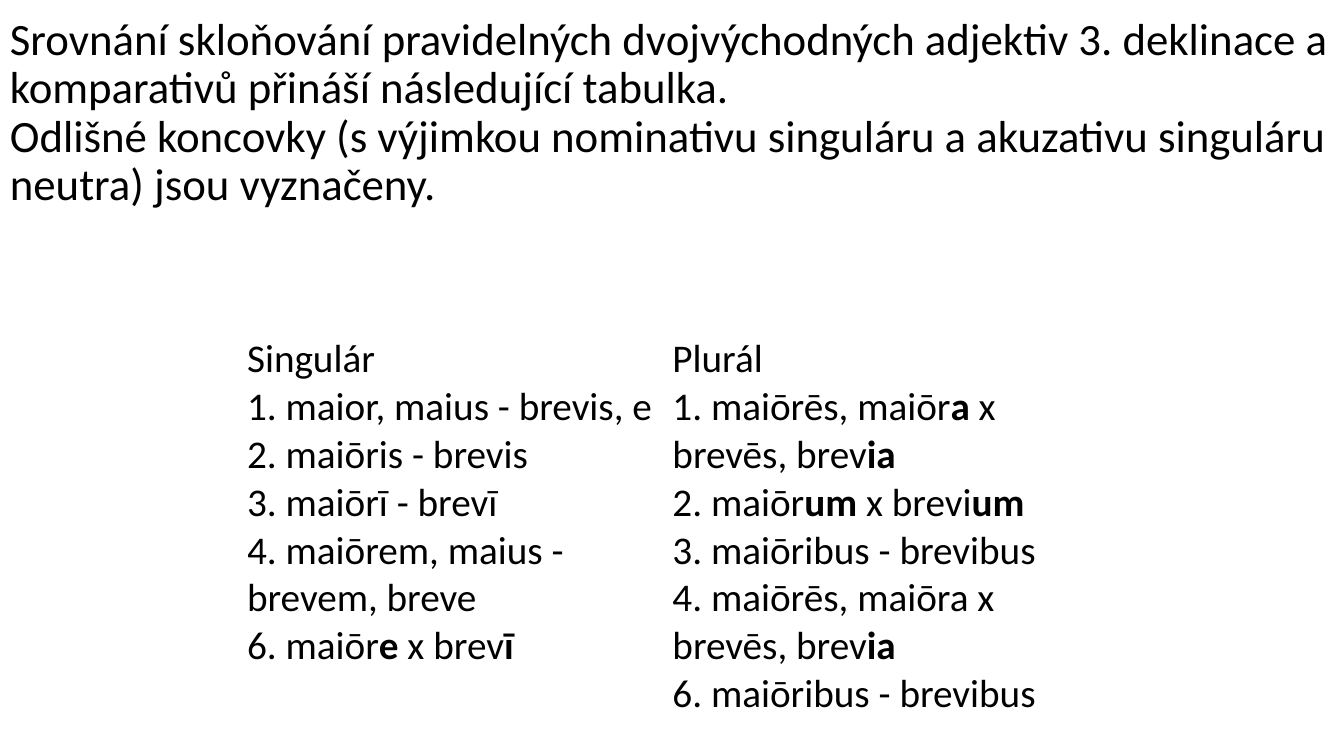
from dataclasses import dataclass

from pptx import Presentation
from pptx.dml.color import RGBColor
from pptx.enum.text import MSO_ANCHOR
from pptx.util import Inches, Pt

MIDDLE = MSO_ANCHOR.MIDDLE

# A vertical tab is a line break inside the paragraph.
INTRO = (
    "Srovnání skloňování pravidelných dvojvýchodných adjektiv 3. deklinace "
    "a komparativů přináší následující tabulka.\v"
    "Odlišné koncovky (s výjimkou nominativu singuláru a akuzativu singuláru "
    "neutra) jsou vyznačeny."
)

# Endings between asterisks are bold.
DECLENSION = {
    "Singulár": [
        "1. maior, maius - brevis, e",
        "2. maiōris - brevis",
        "3. maiōrī - brevī",
        "4. maiōrem, maius - brevem, breve",
        "6. maiōr*e* x brev*ī*",
    ],
    "Plurál": [
        "1. maiōrēs, maiōr*a* x brevēs, brev*ia*",
        "2. maiōr*um* x brevi*um*",
        "3. maiōribus - brevibus",
        "4. maiōrēs, maiōra x brevēs, brev*ia*",
        "6. maiōribus - brevibus",
    ],
}


@dataclass(frozen=True)
class Theme:
    font: str = "Calibri"
    ink: RGBColor = RGBColor(0, 0, 0)
    intro_size: int = 32
    table_size: int = 28


THEME = Theme()
PAGE_WIDTH, PAGE_HEIGHT = 13.33, 7.5
INTRO_TOP, INTRO_HEIGHT = 0.4, 1.45
TABLE_LEFT, TABLE_TOP, COLUMN_WIDTH = 2.45, 3.33, 4.22
LINE_HEIGHT = 0.47
BODY_LINES = 7


def style(span, size, bold=False):
    span.font.name = THEME.font
    span.font.size = Pt(size)
    span.font.color.rgb = THEME.ink
    span.font.bold = bold


def add_intro(page):
    box = page.shapes.add_textbox(
        0, Inches(INTRO_TOP), Inches(PAGE_WIDTH), Inches(INTRO_HEIGHT))
    frame = box.text_frame
    frame.word_wrap = True
    frame.vertical_anchor = MIDDLE
    para = frame.paragraphs[0]
    para.text = INTRO
    para.line_spacing = 0.9
    for span in para.runs:
        style(span, THEME.intro_size)


def fill_cell(cell, lines):
    cell.fill.background()
    cell.margin_left = cell.margin_right = 0
    cell.margin_top = cell.margin_bottom = 0
    frame = cell.text_frame
    for index, line in enumerate(lines):
        para = frame.add_paragraph() if index else frame.paragraphs[0]
        for part, text in enumerate(line.split("*")):
            if text:
                span = para.add_run()
                span.text = text
                style(span, THEME.table_size, bold=part % 2 == 1)


def add_declension(page):
    table = page.shapes.add_table(
        2, len(DECLENSION), Inches(TABLE_LEFT), Inches(TABLE_TOP),
        Inches(COLUMN_WIDTH * len(DECLENSION)),
        Inches(LINE_HEIGHT * (1 + BODY_LINES))).table
    table.first_row = table.horz_banding = False
    table.rows[0].height = Inches(LINE_HEIGHT)
    table.rows[1].height = Inches(LINE_HEIGHT * BODY_LINES)
    for column, (number, forms) in enumerate(DECLENSION.items()):
        table.columns[column].width = Inches(COLUMN_WIDTH)
        fill_cell(table.cell(0, column), [number])
        fill_cell(table.cell(1, column), forms)


def main():
    deck = Presentation()
    deck.slide_width = Inches(PAGE_WIDTH)
    deck.slide_height = Inches(PAGE_HEIGHT)
    page = deck.slides.add_slide(deck.slide_layouts[6])
    add_intro(page)
    add_declension(page)
    deck.save("out.pptx")


if __name__ == "__main__":
    main()
